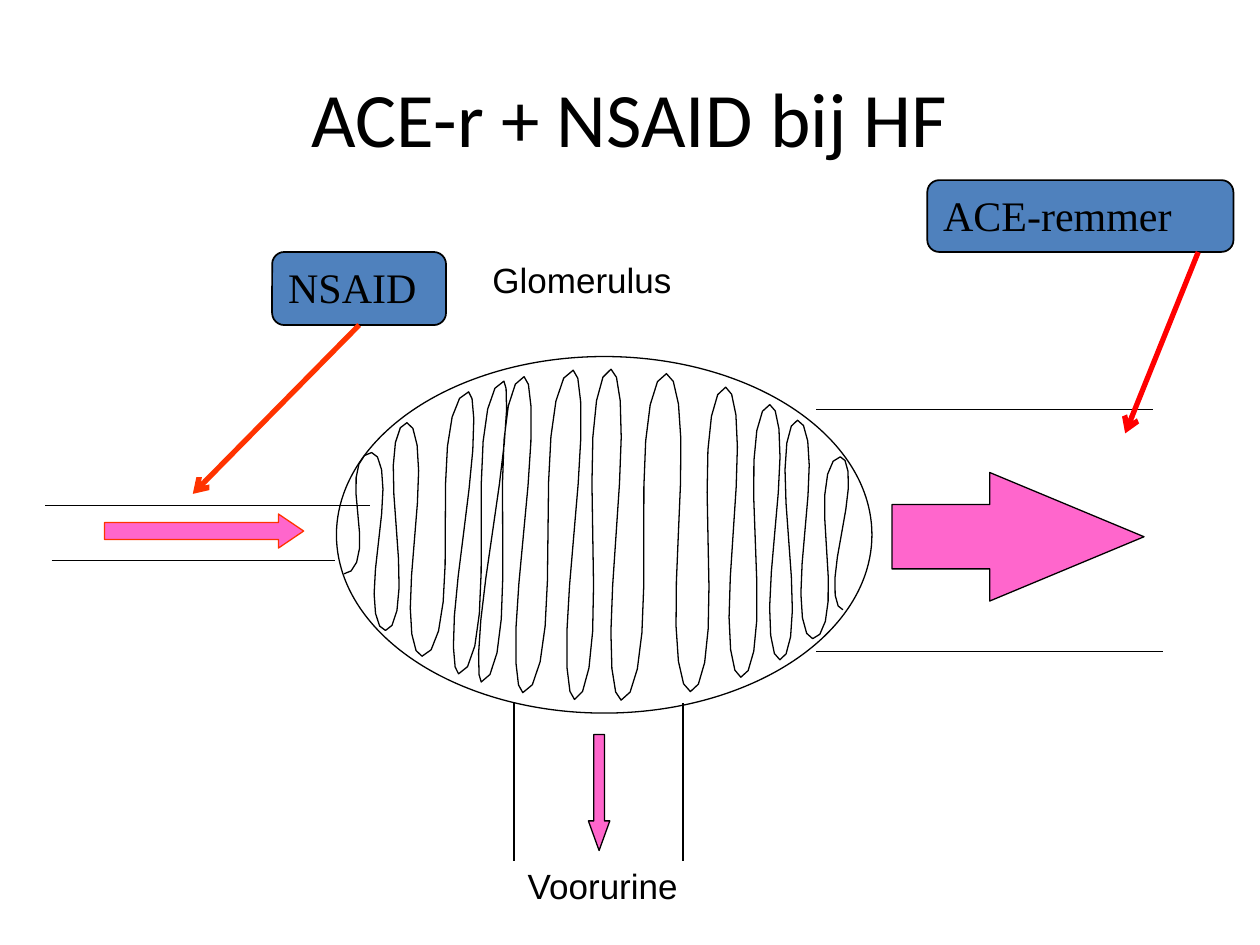
from math import cos, pi, sin, sqrt

from pptx import Presentation
from pptx.dml.color import RGBColor
from pptx.enum.shapes import MSO_CONNECTOR, MSO_SHAPE
from pptx.enum.text import MSO_ANCHOR, PP_ALIGN
from pptx.oxml.ns import qn
from pptx.util import Pt
from lxml.etree import SubElement

PX = 9144  # EMU per px, 100 px to the inch

BLACK = RGBColor(0x00, 0x00, 0x00)
BLUE = RGBColor(0x4F, 0x81, 0xBD)
PINK = RGBColor(0xFF, 0x66, 0xCC)
ORANGE = RGBColor(0xFF, 0x33, 0x00)
RED = RGBColor(0xFF, 0x00, 0x00)

TITLE = "ACE-r + NSAID bij HF"
TITLE_BOX = (50, 30, 900, 125)
TITLE_FONT = {"name": "Calibri", "size": Pt(44)}
LABEL_FONT = {"name": "Arial", "size": Pt(20)}
DRUG_FONT = {"name": "Times New Roman", "size": Pt(24)}

GLOMERULUS = (267, 283, 425, 283)
# x of the capillary's turns, alternately low and high
TURNS = [273, 295, 306, 323, 335, 372, 364, 400, 382, 416, 415, 455, 456,
         485, 493, 529, 548, 576, 588, 611, 619, 633, 645, 667, 669]
TURN_GAP = 10  # between a turn and the glomerulus wall
BULGE = 6
STEPS = 10

# from x, from y, to x, to y
VESSEL_WALLS = [
    (36, 401, 294, 401), (41, 445, 266, 445),  # inflow
    (648, 325, 915, 325), (648, 517, 923, 517),  # outflow
    (408, 558, 408, 683), (542, 558, 542, 683),  # filtrate
]
EFFECT_ARROWS = [((285, 258, 153, 392), ORANGE), ((951, 200, 893, 344), RED)]

# box, preset, head length, outline
FLOWS = [
    ((83, 408, 158, 27), MSO_SHAPE.RIGHT_ARROW, 0.74, ORANGE),
    ((708, 375, 200, 102), MSO_SHAPE.RIGHT_ARROW, 1.2, BLACK),
    ((467, 583, 17, 92), MSO_SHAPE.DOWN_ARROW, 1.38, BLACK),
]
LABELS = [("Glomerulus", (381, 200, 164, 44)), ("Voorurine", (409, 681, 140, 44))]
DRUGS = [("NSAID", (216, 200, 138, 58)), ("ACE-remmer", (736, 143, 243, 57))]


def emu(lengths):
    return [n * PX for n in lengths]


def capillary_points():
    """Winding line whose turns follow the inside of the glomerulus wall."""
    left, top, width, height = GLOMERULUS
    rx, ry = width / 2, height / 2
    turns = []
    for i, x in enumerate(TURNS):
        reach = (ry - TURN_GAP) * sqrt(1 - ((x - left - rx) / rx) ** 2)
        turns.append((x, top + ry + (-reach if i % 2 else reach)))
    points = [turns[0]]
    for (x0, y0), (x1, y1) in zip(turns, turns[1:]):
        for step in range(1, STEPS + 1):
            t = step / STEPS
            points.append((x0 + (x1 - x0) * t + BULGE * sin(2 * pi * t),
                           y0 + (y1 - y0) * (1 - cos(pi * t)) / 2))
    return points


def write(tf, text, font, anchor, align):
    tf.vertical_anchor = anchor
    p = tf.paragraphs[0]
    p.alignment = align
    r = p.add_run()
    r.text = text
    for key, value in font.items():
        setattr(r.font, key, value)
    r.font.color.rgb = BLACK


def style(sp, line, fill=None, width=0.75):
    sp.shadow.inherit = False
    if fill is None:
        sp.fill.background()
    else:
        sp.fill.solid()
        sp.fill.fore_color.rgb = fill
    sp.line.color.rgb = line
    sp.line.width = Pt(width)


def add_line(s, ends, color, width=0.75, arrow=False):
    cx = s.shapes.add_connector(MSO_CONNECTOR.STRAIGHT, *emu(ends))
    cx.line.color.rgb = color
    cx.line.width = Pt(width)
    if arrow:
        SubElement(cx.line._get_or_add_ln(), qn("a:tailEnd"), type="arrow")
    SubElement(cx._element.spPr, qn("a:effectLst"))


def main():
    prs = Presentation()
    prs.slide_width, prs.slide_height = emu((1000, 750))
    s = prs.slides.add_slide(prs.slide_layouts[5])

    title = s.shapes.title
    title.left, title.top, title.width, title.height = emu(TITLE_BOX)
    write(title.text_frame, TITLE, TITLE_FONT, MSO_ANCHOR.MIDDLE, PP_ALIGN.CENTER)

    style(s.shapes.add_shape(MSO_SHAPE.OVAL, *emu(GLOMERULUS)), BLACK)
    start, *rest = [emu(point) for point in capillary_points()]
    builder = s.shapes.build_freeform(*start)
    builder.add_line_segments(rest, close=False)
    style(builder.convert_to_shape(), BLACK)

    for ends in VESSEL_WALLS:
        add_line(s, ends, BLACK)

    for box, preset, head, outline in FLOWS:
        sp = s.shapes.add_shape(preset, *emu(box))
        sp.adjustments[0] = 0.5
        sp.adjustments[1] = head
        style(sp, outline, PINK)

    for text, box in LABELS:
        tf = s.shapes.add_textbox(*emu(box)).text_frame
        tf.word_wrap = False
        write(tf, text, LABEL_FONT, MSO_ANCHOR.MIDDLE, PP_ALIGN.LEFT)

    for text, box in DRUGS:
        sp = s.shapes.add_shape(MSO_SHAPE.ROUNDED_RECTANGLE, *emu(box))
        style(sp, BLACK, BLUE, 1)
        write(sp.text_frame, text, DRUG_FONT, MSO_ANCHOR.TOP, PP_ALIGN.LEFT)

    for ends, color in EFFECT_ARROWS:
        add_line(s, ends, color, 3, arrow=True)

    prs.save("out.pptx")


if __name__ == "__main__":
    main()
